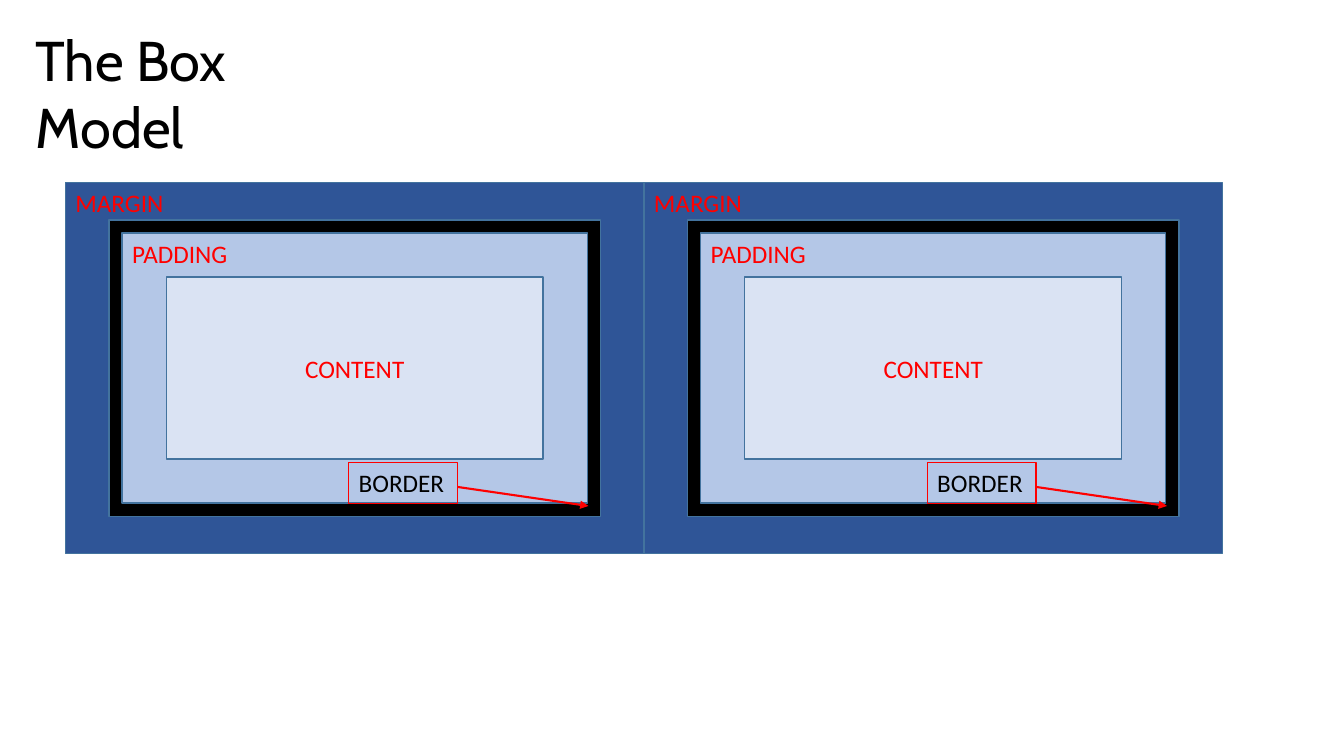
from lxml import etree
from pptx import Presentation
from pptx import util as u
from pptx.dml.color import RGBColor
from pptx.enum import shapes, text
from pptx.oxml.ns import qn

RED = RGBColor(0xFF, 0x00, 0x00)
BLACK = RGBColor(0x00, 0x00, 0x00)
OUTLINE = RGBColor(0x43, 0x73, 0x9E)
MARGIN_BLUE = RGBColor(0x2F, 0x55, 0x97)
PADDING_BLUE = RGBColor(0xB4, 0xC7, 0xE7)
CONTENT_BLUE = RGBColor(0xDA, 0xE3, 0xF3)

TOP_LEFT = (text.MSO_ANCHOR.TOP, text.PP_ALIGN.LEFT)
CENTRE = (text.MSO_ANCHOR.MIDDLE, text.PP_ALIGN.CENTER)
LAYERS = [
    ("MARGIN", 0, 0, MARGIN_BLUE, TOP_LEFT),
    ("", 1.1, 0.94, BLACK, TOP_LEFT),
    ("PADDING", 1.43, 1.27, PADDING_BLUE, TOP_LEFT),
    ("CONTENT", 2.54, 2.38, CONTENT_BLUE, CENTRE),
]


def write(shape, words, placing, **font_format):
    """Put one formatted paragraph into a shape."""
    frame = shape.text_frame
    frame.word_wrap = True
    frame.vertical_anchor, alignment = placing
    para = frame.paragraphs[0]
    para.alignment = alignment
    span = para.add_run()
    span.text = words
    span.font.color.rgb = font_format.pop("color")
    for name, value in font_format.items():
        setattr(span.font, name, value)


def add_rectangle(group, left, top, width, height, fill, line, weight):
    """Draw a flat rectangle, hollow when it has no fill colour."""
    box = group.shapes.add_shape(
        shapes.MSO_SHAPE.RECTANGLE, u.Cm(left), u.Cm(top), u.Cm(width), u.Cm(height))
    box.shadow.inherit = False
    if fill is None:
        box.fill.background()
    else:
        box.fill.solid()
        box.fill.fore_color.rgb = fill
    box.line.color.rgb = line
    box.line.width = u.Pt(weight)
    return box


def add_arrow(group, start_x, start_y, end_x, end_y):
    """Draw a red arrow between two points."""
    arrow = group.shapes.add_connector(
        shapes.MSO_CONNECTOR.STRAIGHT,
        u.Cm(start_x), u.Cm(start_y), u.Cm(end_x), u.Cm(end_y))
    arrow.line.color.rgb = RED
    arrow.line.width = u.Pt(1.5)
    etree.SubElement(arrow.line._get_or_add_ln(), qn("a:tailEnd"), type="triangle")
    etree.SubElement(arrow._element.spPr, qn("a:effectLst"))


def add_box_model(page, left, top, width, height):
    """Nest the box model layers and point out the border."""
    group = page.shapes.add_group_shape()
    label_font = {"name": "Calibri", "size": u.Pt(18)}
    for words, inset_x, inset_y, fill, placing in LAYERS:
        layer = add_rectangle(
            group, left + inset_x, top + inset_y,
            width - 2 * inset_x, height - 2 * inset_y, fill, OUTLINE, 1)
        if words:
            write(layer, words, placing, color=RED, **label_font)
    label = add_rectangle(group, left + 7.14, top + 7.06, 2.74, 1.02, None, RED, 0.75)
    write(label, "BORDER", TOP_LEFT, color=BLACK, **label_font)
    add_arrow(group, left + 9.88, top + 7.67, left + 13.18, top + 8.15)


def add_title(page, left, top, width, height):
    """Place and format the slide title."""
    title = page.shapes.title
    place = {"left": left, "top": top, "width": width, "height": height}
    for name, value in place.items():
        setattr(title, name, u.Cm(value))
    write(title, "The Box Model", TOP_LEFT, name="Cabin", size=u.Pt(40), color=BLACK)
    title.text_frame.auto_size = text.MSO_AUTO_SIZE.SHAPE_TO_FIT_TEXT


def main():
    """Build the deck and save it."""
    deck = Presentation()
    deck.slide_width, deck.slide_height = u.Cm(33.87), u.Cm(19.05)
    page = deck.slides.add_slide(deck.slide_layouts.get_by_name("Title Only"))
    add_title(page, 0.64, 0.51, 8.99, 1.96)
    width = 14.58
    for column in range(2):
        add_box_model(page, 1.65 + column * width, 4.6, width, 9.35)
    deck.save("out.pptx")


if __name__ == "__main__":
    main()
